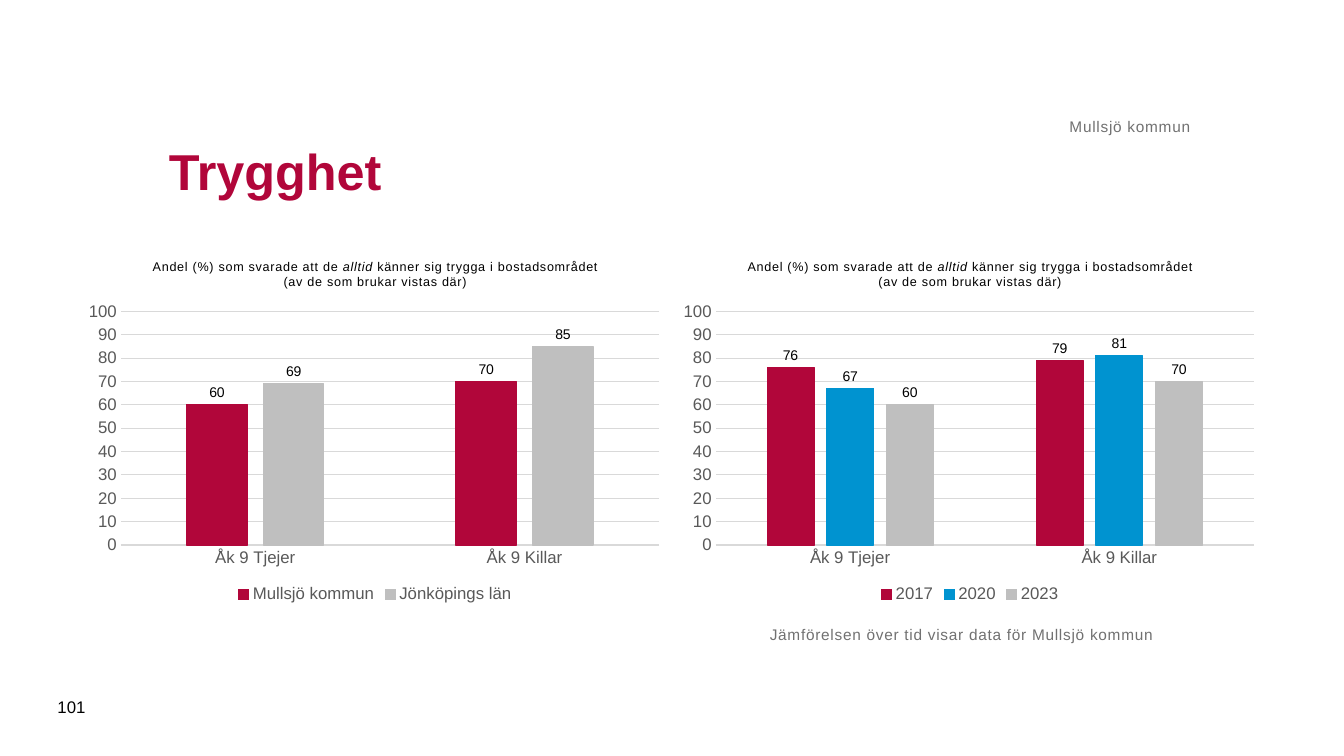
from lxml.etree import SubElement
from pptx import Presentation
from pptx.chart.data import CategoryChartData
from pptx.dml.color import RGBColor
from pptx.enum.chart import XL_CHART_TYPE, XL_LABEL_POSITION, XL_LEGEND_POSITION, XL_TICK_MARK
from pptx.enum.text import MSO_ANCHOR, PP_ALIGN
from pptx.oxml import parse_xml
from pptx.oxml.ns import nsdecls, qn
from pptx.util import Cm, Pt

FONT = "Arial"
RED, BLUE, SILVER = "B1063A", "0093D0", "BFBFBF"
BLACK, AXIS_TEXT, NOTE_TEXT, GRID = "000000", "595959", "717171", "D9D9D9"
NUMBER_FORMAT = "#,##0;#,##0"
CATEGORIES = ["Åk 9 Tjejer", "Åk 9 Killar"]
REGION_SERIES = [("Mullsjö kommun", (60, 70), RED), ("Jönköpings län", (69, 85), SILVER)]
YEAR_SERIES = [("2017", (76, 79), RED), ("2020", (67, 81), BLUE), ("2023", (60, 70), SILVER)]
QUESTION = [
    [("Andel (%) som svarade att de ", False), ("alltid", True),
     (" känner sig trygga i bostadsområdet", False)],
    [("(av de som brukar vistas där)", False)],
]
PLOT_AREA = {"x": 0.07, "y": 0.19, "w": 0.91, "h": 0.64}


def rgb(color):
    return RGBColor.from_string(color)


def set_font(font, size, color, bold=False):
    font.name = FONT
    font.size = Pt(size)
    font.bold = bold
    font.color.rgb = rgb(color)


def set_line(line, color):
    line.color.rgb = rgb(color)
    line.width = Pt(0.75)


def space_letters(r):
    r.font._element.set("spc", "50")


def add_title(slide, box, text):
    sp = slide.shapes.title
    sp.left, sp.top, sp.width, sp.height = (Cm(v) for v in box)
    tf = sp.text_frame
    tf.text = text
    tf.vertical_anchor = MSO_ANCHOR.MIDDLE
    p = tf.paragraphs[0]
    p.alignment = PP_ALIGN.LEFT
    set_font(p.font, 36, RED, bold=True)


def add_text(slide, box, text, size, color, anchor=MSO_ANCHOR.TOP, align=PP_ALIGN.LEFT):
    tf = slide.shapes.add_textbox(*(Cm(v) for v in box)).text_frame
    tf.word_wrap = True
    tf.vertical_anchor = anchor
    p = tf.paragraphs[0]
    p.alignment = align
    p.add_run().text = text
    set_font(p.font, size, color)
    return tf


def add_note(slide, box, text, **placing):
    """Add a grey, letter-spaced line without insets."""
    tf = add_text(slide, box, text, 11, NOTE_TEXT, **placing)
    tf.margin_left = tf.margin_top = tf.margin_right = tf.margin_bottom = 0
    space_letters(tf.paragraphs[0].runs[0])


def set_chart_title(chart):
    tf = chart.chart_title.text_frame
    chart.chart_title.include_in_layout = False
    for i, parts in enumerate(QUESTION):
        p = tf.add_paragraph() if i else tf.paragraphs[0]
        set_font(p.font, 9, BLACK)
        for text, italic in parts:
            r = p.add_run()
            r.text = text
            set_font(r.font, 9, BLACK)
            r.font.italic = italic
            space_letters(r)


def set_axes(chart):
    for axis in (chart.category_axis, chart.value_axis):
        axis.major_tick_mark = axis.minor_tick_mark = XL_TICK_MARK.NONE
        set_font(axis.tick_labels.font, 12, AXIS_TEXT)
    set_line(chart.category_axis.format.line, GRID)
    axis = chart.value_axis
    axis.minimum_scale, axis.maximum_scale, axis.major_unit = 0, 100, 10
    axis.format.line.fill.background()
    set_line(axis.major_gridlines.format.line, GRID)
    axis.tick_labels.number_format = NUMBER_FORMAT
    axis.tick_labels.number_format_is_linked = False


def set_plot_area(chart):
    """Fix the inner plot area as fractions of the chart."""
    area = chart._chartSpace.find(".//" + qn("c:plotArea"))
    for old in area.findall(qn("c:layout")):
        area.remove(old)
    layout = parse_xml(f"<c:layout {nsdecls('c')}><c:manualLayout/></c:layout>")
    settings = {"layoutTarget": "inner", "xMode": "edge", "yMode": "edge", **PLOT_AREA}
    for tag, val in settings.items():
        SubElement(layout[0], qn("c:" + tag)).set("val", str(val))
    area.insert(0, layout)


def add_bar_chart(slide, box, series):
    data = CategoryChartData()
    data.categories = CATEGORIES
    for name, values, _ in series:
        data.add_series(name, values)
    chart = slide.shapes.add_chart(
        XL_CHART_TYPE.COLUMN_CLUSTERED, *(Cm(v) for v in box), data).chart
    set_font(chart.font, 10, BLACK)
    set_chart_title(chart)
    set_axes(chart)
    set_plot_area(chart)
    chart.has_legend = True
    chart.legend.position = XL_LEGEND_POSITION.BOTTOM
    chart.legend.include_in_layout = False
    set_font(chart.legend.font, 12, AXIS_TEXT)
    plot = chart.plots[0]
    plot.gap_width, plot.overlap, plot.vary_by_categories = 219, -27, False
    for bars, (_, _, color) in zip(plot.series, series):
        bars.format.fill.solid()
        bars.format.fill.fore_color.rgb = rgb(color)
        set_line(bars.format.line, color)
        labels = bars.data_labels
        labels.show_value = True
        labels.position = XL_LABEL_POSITION.OUTSIDE_END
        labels.number_format = NUMBER_FORMAT
        labels.number_format_is_linked = False
        set_font(labels.font, 10, BLACK)


def add_charts(slide, box):
    left, top, width, height = box
    gap = 0.08
    chart_width = (width - gap) / 2
    for i, series in enumerate((REGION_SERIES, YEAR_SERIES)):
        add_bar_chart(slide, (left + i * (chart_width + gap), top, chart_width, height), series)


def main():
    prs = Presentation()
    prs.slide_width, prs.slide_height = Cm(33.87), Cm(19.05)
    slide = prs.slides.add_slide(prs.slide_layouts[5])
    add_charts(slide, (2, 6.1, 29.9, 9.2))
    add_title(slide, (4, 2.5, 26, 3.6), "Trygghet")
    add_note(slide, (19.4, 15.75, 13.5, 2.4), "Jämförelsen över tid visar data för Mullsjö kommun")
    add_note(slide, (4, 1.58, 26, 1.85), "Mullsjö kommun",
             anchor=MSO_ANCHOR.BOTTOM, align=PP_ALIGN.RIGHT)
    add_text(slide, (1.2, 17.3, 1.45, 1), "101", 12, BLACK, anchor=MSO_ANCHOR.MIDDLE)
    prs.save("out.pptx")


if __name__ == "__main__":
    main()
